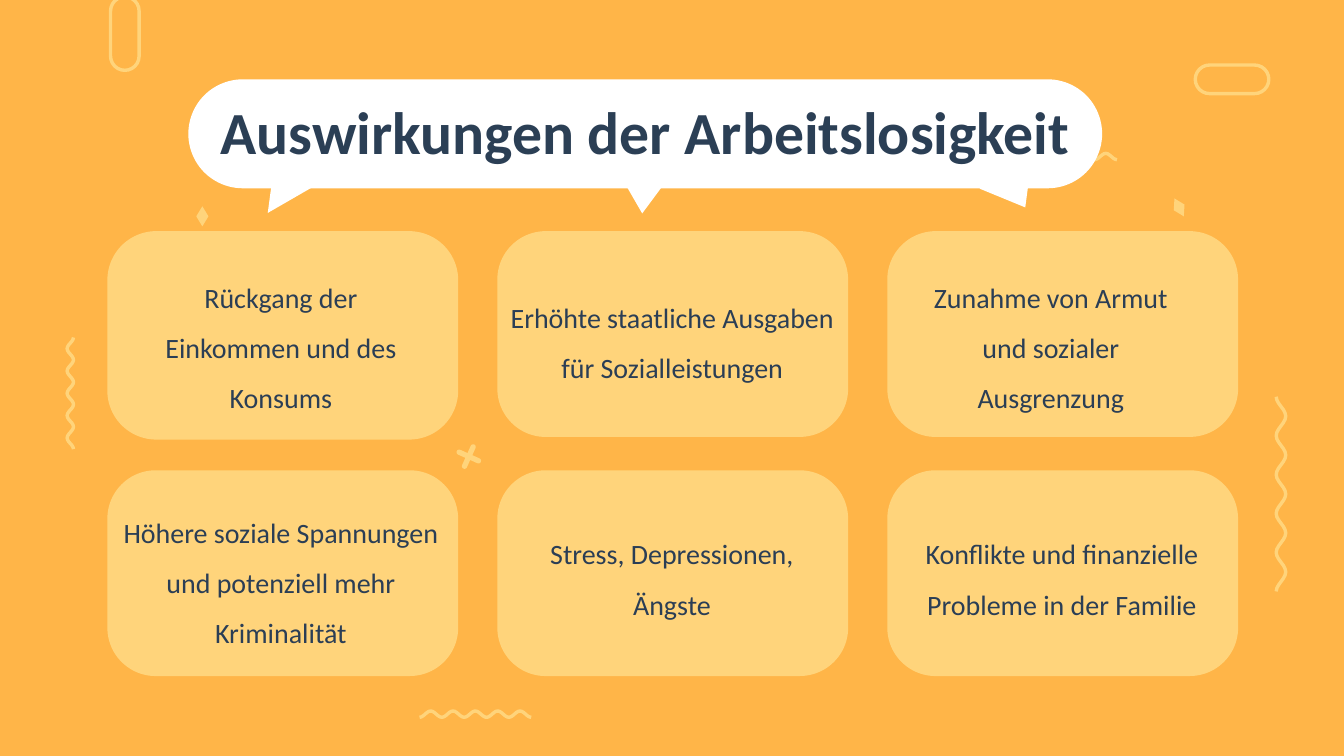
from dataclasses import dataclass
from math import cos, pi

from pptx import Presentation
from pptx.dml.color import RGBColor
from pptx.enum.shapes import MSO_SHAPE
from pptx.enum.text import MSO_ANCHOR, PP_ALIGN
from pptx.util import Cm, Pt

ROUNDED = MSO_SHAPE.ROUNDED_RECTANGLE
TRIANGLE = MSO_SHAPE.ISOSCELES_TRIANGLE
DIAMOND = MSO_SHAPE.DIAMOND
MIDDLE, TOP = MSO_ANCHOR.MIDDLE, MSO_ANCHOR.TOP
CENTER = PP_ALIGN.CENTER


@dataclass(frozen=True)
class Theme:
    background: RGBColor = RGBColor(0xFF, 0xB5, 0x48)
    accent: RGBColor = RGBColor(0xFF, 0xD4, 0x7B)
    bubble: RGBColor = RGBColor(0xFF, 0xFF, 0xFF)
    title_ink: RGBColor = RGBColor(0x2B, 0x3F, 0x55)
    ink: RGBColor = RGBColor(0x2B, 0x3E, 0x55)
    font: str = "Calibri"
    title_size: Pt = Pt(32)
    body_size: Pt = Pt(15)
    stroke: Pt = Pt(1.8)


@dataclass(frozen=True)
class Box:
    left: float
    top: float
    width: float
    height: float

    def inner(self, left, top, width, height):
        return Box(self.left + left, self.top + top, width, height)

    def lengths(self):
        return Cm(self.left), Cm(self.top), Cm(self.width), Cm(self.height)


@dataclass(frozen=True)
class Card:
    text: str
    text_left: float
    text_top: float
    text_width: float
    height: float = 3.89


THEME = Theme()

CARDS = [
    Card("Rückgang der Einkommen und des Konsums", 0.36, 0.36, 5.84, 3.94),
    Card("Erhöhte staatliche Ausgaben für Sozialleistungen", -0.05, 0.74, 6.71),
    Card("Zunahme von Armut und sozialer Ausgrenzung", 0.17, 0.36, 5.84),
    Card("Höhere soziale Spannungen und potenziell mehr Kriminalität", -0.1, 0.28, 6.76),
    Card("Stress, Depressionen, Ängste", 0.38, 0.69, 5.84),
    Card("Konflikte und finanzielle Probleme in der Familie", 0.38, 0.69, 5.84),
]


def add_solid(page, kind, box, color, rotation=0, corner=None):
    shape = page.shapes.add_shape(kind, *box.lengths())
    shape.shadow.inherit = False
    shape.fill.solid()
    shape.fill.fore_color.rgb = color
    shape.line.fill.background()
    shape.rotation = rotation
    if corner is not None:
        shape.adjustments[0] = corner
    return shape


def outline_only(shape):
    shape.shadow.inherit = False
    shape.fill.background()
    shape.line.color.rgb = THEME.accent
    shape.line.width = THEME.stroke


def add_label(page, box, text, size, color, anchor, bold=False, spacing=1.0):
    frame = page.shapes.add_textbox(*box.lengths()).text_frame
    frame.word_wrap = True
    frame.vertical_anchor = anchor
    frame.margin_left = frame.margin_right = Cm(0.25)
    frame.margin_top = frame.margin_bottom = Cm(0.25)
    para = frame.paragraphs[0]
    para.text = text
    para.alignment = CENTER
    para.line_spacing = spacing
    para.font.name = THEME.font
    para.font.size = size
    para.font.bold = bold
    para.font.color.rgb = color


def add_pill(page, box):
    pill = page.shapes.add_shape(ROUNDED, *box.lengths())
    pill.adjustments[0] = 0.5
    outline_only(pill)


def add_wave(page, box, starts_far=True, cycles=5, steps=60):
    sign = 1 if starts_far else -1
    points = []
    for step in range(steps + 1):
        along = step / steps
        across = (1 + sign * cos(2 * pi * cycles * along)) / 2
        x, y = (across, along) if box.height > box.width else (along, across)
        points.append((Cm(box.left + x * box.width), Cm(box.top + y * box.height)))
    builder = page.shapes.build_freeform(*points[0])
    builder.add_line_segments(points[1:], close=False)
    outline_only(builder.convert_to_shape())


def add_cross(page, box):
    thickness = 0.1
    bar = box.inner(0, (box.height - thickness) / 2, box.width, thickness)
    for rotation in (24, 114):
        add_solid(page, ROUNDED, bar, THEME.accent, rotation, 0.5)


def add_ornaments(page, box):
    add_pill(page, box.inner(22.59, 1.23, 1.39, 0.54))
    add_pill(page, box.inner(2.09, -0.06, 0.54, 1.39))
    add_solid(page, DIAMOND, box.inner(3.71, 3.9, 0.23, 0.38), THEME.accent)
    add_solid(page, DIAMOND, box.inner(22.17, 3.73, 0.23, 0.38), THEME.accent, 332.5)
    add_wave(page, box.inner(7.93, 13.44, 2.11, 0.12))
    add_wave(page, box.inner(1.27, 6.38, 0.12, 2.11))
    add_wave(page, box.inner(19.0, 2.9, 2.11, 0.12))
    add_wave(page, box.inner(24.12, 7.5, 0.18, 3.68), starts_far=False)
    add_cross(page, box.inner(8.61, 8.38, 0.5, 0.5))


def add_title_bubble(page, box, text):
    add_solid(page, ROUNDED, box, THEME.bubble, corner=0.5)
    tails = [
        (box.inner(15.06, 1.73, 1.14, 0.74), 150),
        (box.inner(1.24, 1.55, 1.14, 0.74), 330),
        (box.inner(8.36, 1.42, 0.86, 0.99), 60),
    ]
    for tail, rotation in tails:
        add_solid(page, TRIANGLE, tail, THEME.bubble, rotation)
    add_label(page, box.inner(0.13, 0.23, 17.02, 1.47), text,
              THEME.title_size, THEME.title_ink, MIDDLE, bold=True)


def add_card_grid(page, box, cards, columns=3):
    card_width, column_step, row_step = 6.63, 7.37, 4.52
    for index, card in enumerate(cards):
        row, column = divmod(index, columns)
        place = box.inner(column * column_step, row * row_step, card_width, card.height)
        add_solid(page, ROUNDED, place, THEME.accent, corner=0.235)
        label = place.inner(card.text_left, card.text_top, card.text_width, 1.7)
        add_label(page, label, card.text, THEME.body_size, THEME.ink, TOP, spacing=1.5)


def main():
    deck = Presentation()
    full = Box(0, 0, 25.4, 14.29)
    deck.slide_width, deck.slide_height = Cm(full.width), Cm(full.height)
    page = deck.slides.add_slide(deck.slide_layouts[6])
    page.background.fill.solid()
    page.background.fill.fore_color.rgb = THEME.background
    add_ornaments(page, full)
    add_card_grid(page, full.inner(2.03, 4.37, 21.37, 8.41), CARDS)
    add_title_bubble(page, full.inner(3.56, 1.5, 17.27, 2.06),
                     "Auswirkungen der Arbeitslosigkeit")
    deck.save("out.pptx")


if __name__ == "__main__":
    main()
